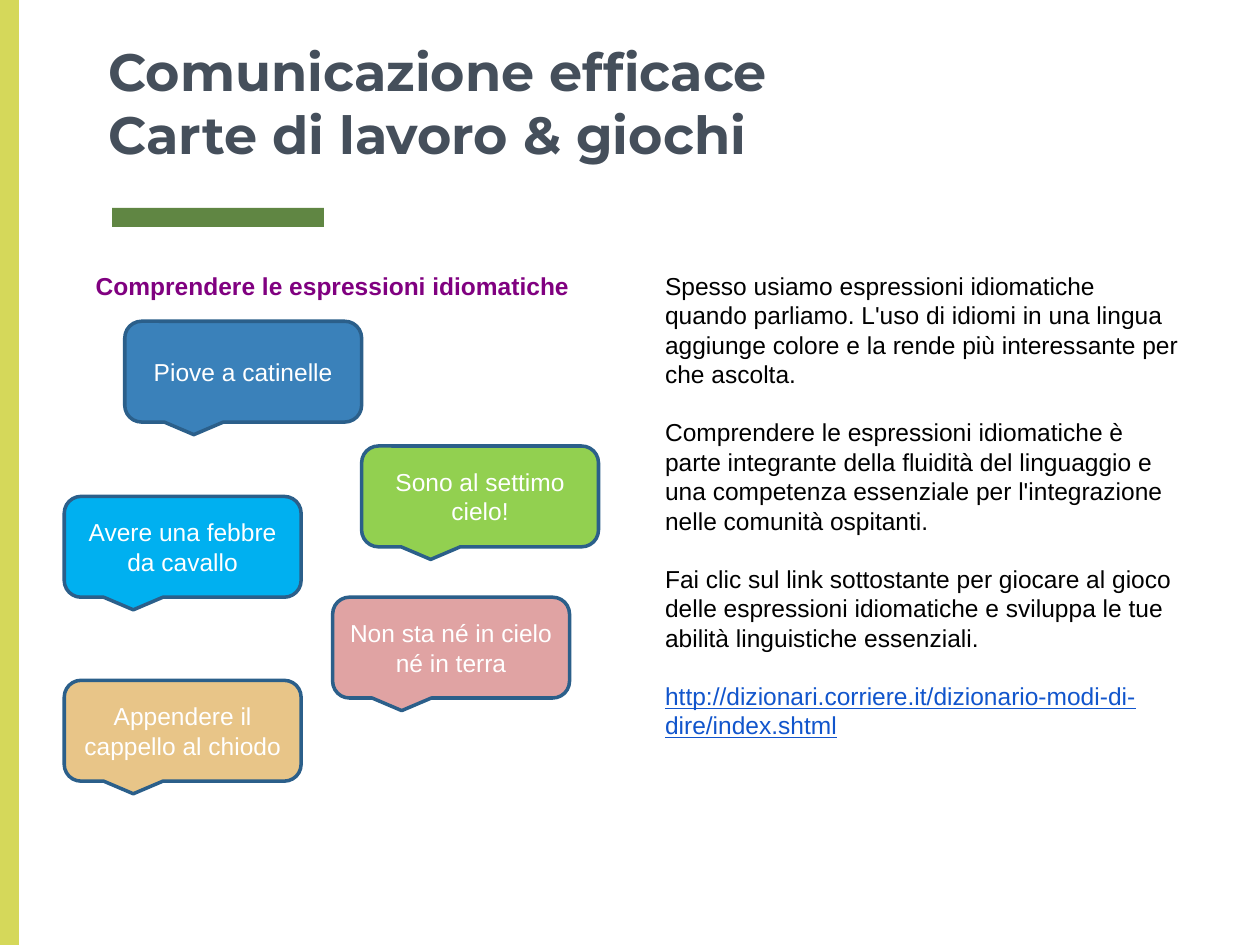
from pptx import Presentation
from pptx.dml.color import RGBColor
from pptx.enum import shapes, text
from pptx.util import Inches, Pt

WHITE = RGBColor(0xFF, 0xFF, 0xFF)
BLACK = RGBColor(0, 0, 0)
SLATE = RGBColor(0x45, 0x4F, 0x5B)
PURPLE = RGBColor(0x80, 0x00, 0x80)
LINK = RGBColor(0x11, 0x55, 0xCC)
OUTLINE = RGBColor(0x2B, 0x5F, 0x8A)
GREEN = RGBColor(0x60, 0x86, 0x43)
LIME = RGBColor(0xD5, 0xD8, 0x5A)

TITLE = "Comunicazione efficace\vCarte di lavoro & giochi"
HEADING = "Comprendere le espressioni idiomatiche"
BODY = [
    "Spesso usiamo espressioni idiomatiche quando parliamo. L'uso di idiomi in una lingua "
    "aggiunge colore e la rende più interessante per che ascolta.",
    "Comprendere le espressioni idiomatiche è parte integrante della fluidità del linguaggio "
    "e una competenza essenziale per l'integrazione nelle comunità ospitanti.",
    "Fai clic sul link sottostante per giocare al gioco delle espressioni idiomatiche e "
    "sviluppa le tue abilità linguistiche essenziali.",
]
URL = "http://dizionari.corriere.it/dizionario-modi-di-dire/index.shtml"
BARS = [
    ((0.89, 1.65, 1.68, 0.15), GREEN),
    ((0, 0, 0.15, 7.5), LIME),
]
IDIOMS = [
    ("Piove a catinelle", 0.99, 2.55, RGBColor(0x3A, 0x81, 0xBA)),
    ("Sono al settimo cielo!", 2.87, 3.54, RGBColor(0x92, 0xD0, 0x50)),
    ("Avere una febbre da cavallo", 0.51, 3.94, RGBColor(0x00, 0xB0, 0xF0)),
    ("Non sta né in cielo né in terra", 2.64, 4.74, RGBColor(0xE0, 0xA3, 0xA3)),
    ("Appendere il cappello al chiodo", 0.51, 5.4, RGBColor(0xE8, 0xC5, 0x88)),
]
CALLOUT_SIZE = (1.88, 0.8)
CENTER = text.PP_ALIGN.CENTER


def write(tf, paragraphs, color, align=text.PP_ALIGN.LEFT, gap=0, **fmt):
    tf.word_wrap = True
    fmt = {"name": "Arial", "size": Pt(14), **fmt}
    for i, content in enumerate(paragraphs):
        p = tf.add_paragraph() if i else tf.paragraphs[0]
        p.text = content
        p.alignment = align
        p.space_before = Pt(gap if i else 0)
        for r in p.runs:
            for key, value in fmt.items():
                setattr(r.font, key, value)
            r.font.color.rgb = color


def add_shape(s, kind, box, fill):
    sp = s.shapes.add_shape(kind, *map(Inches, box))
    sp.shadow.inherit = False
    sp.fill.solid()
    sp.fill.fore_color.rgb = fill
    sp.line.fill.background()
    return sp


def add_text(s, box, *args, **fmt):
    tf = s.shapes.add_textbox(*map(Inches, box)).text_frame
    write(tf, *args, **fmt)
    return tf


prs = Presentation()
prs.slide_width, prs.slide_height = Inches(10), Inches(7.5)
s = prs.slides.add_slide(prs.slide_layouts[5])

for box, fill in BARS:
    add_shape(s, shapes.MSO_SHAPE.RECTANGLE, box, fill)

title = s.shapes.title
title.left, title.top, title.width, title.height = map(Inches, (0.76, 0, 8.49, 1.41))
tf = title.text_frame
tf.auto_size = text.MSO_AUTO_SIZE.NONE
tf.vertical_anchor = text.MSO_ANCHOR.BOTTOM
for side in ("left", "top", "right", "bottom"):
    setattr(tf, f"margin_{side}", Inches(0.1))
write(tf, [TITLE], SLATE, name="Montserrat", size=Pt(30), bold=True)

tf = add_text(s, (5.18, 2.1, 4.28, 4.11), BODY + [URL], BLACK, gap=16.5)
link = tf.paragraphs[-1].runs[0].font
link.underline = True
link.color.rgb = LINK

add_text(s, (0.31, 2.1, 4.66, 0.34), [HEADING], PURPLE, CENTER, bold=True)

for idiom, left, top, fill in IDIOMS:
    sp = add_shape(s, shapes.MSO_SHAPE.ROUNDED_RECTANGULAR_CALLOUT,
                   (left, top, *CALLOUT_SIZE), fill)
    sp.line.color.rgb = OUTLINE
    sp.line.width = Pt(2)
    sp.text_frame.vertical_anchor = text.MSO_ANCHOR.MIDDLE
    write(sp.text_frame, [idiom], WHITE, CENTER)

prs.save("out.pptx")
